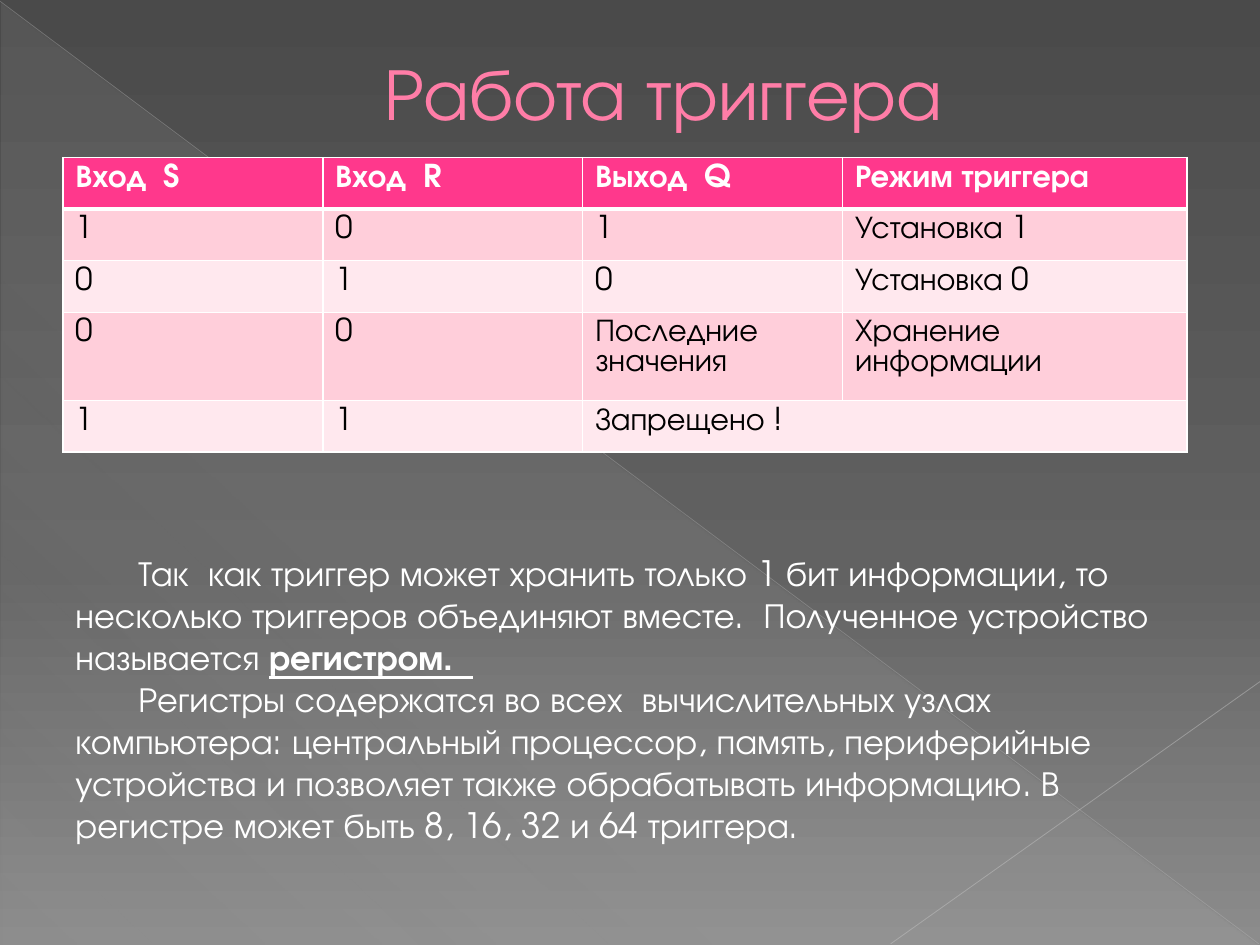
from lxml.etree import SubElement
from pptx import Presentation
from pptx.dml.color import RGBColor
from pptx.enum.shapes import MSO_CONNECTOR, MSO_SHAPE
from pptx.enum.text import MSO_ANCHOR, PP_ALIGN
from pptx.oxml.ns import qn
from pptx.util import Pt

FONT = "TeX Gyre Adventor"
WHITE = RGBColor(0xFF, 0xFF, 0xFF)
BLACK = RGBColor(0, 0, 0)
PINK = RGBColor(0xFF, 0x7D, 0xA7)
WINE = RGBColor(0xB1, 0x27, 0x61)
HEAD = RGBColor(0xFF, 0x38, 0x8C)
BANDS = RGBColor(0xFF, 0xCE, 0xDA), RGBColor(0xFF, 0xE8, 0xEE)
MIST = RGBColor(0xD2, 0xD2, 0xD2)
ASH = RGBColor(0xBF, 0xBF, 0xBF)
SILVER = RGBColor(0xC6, 0xC6, 0xC6)

# Gradient stops: position, colour, opacity, all in percent
SKY = [
    (0, RGBColor(0x4A, 0x4A, 0x4A), 100),
    (60, RGBColor(0x62, 0x62, 0x62), 100),
    (100, RGBColor(0x8C, 0x8C, 0x8C), 100),
]
VEIL = [(0, MIST, 10), (70, MIST, 8), (100, MIST, 1)]

# Ends, colour, width, opacity
LINES = [
    ((0, 0.7, 719.3, 539.3), ASH, 0.39, 35),
    ((720, 389.5, 509, 539.3), SILVER, 0.47, 45),
]

TITLE = "Работа триггера"
ROWS = [
    ("Вход  S", "Вход  R", "Выход  Q", "Режим триггера"),
    ("1", "0", "1", "Установка 1"),
    ("0", "1", "0", "Установка 0"),
    ("0", "0", "Последние значения", "Хранение информации"),
    ("1", "1", "Запрещено !", ""),
]
WIDTHS = (148.5, 148.5, 148.5, 197)
ROW = 29.5

# Paragraphs of (text, is a key term)
NOTES = [
    [("\tТак  как триггер может хранить только 1 бит информации, то несколько "
      "триггеров объединяют вместе.  Полученное устройство называется ", False),
     ("регистром.  ", True)],
    [("\tРегистры содержатся во всех  вычислительных узлах компьютера: "
      "центральный процессор, память, периферийные устройства и позволяет "
      "также обрабатывать информацию. В регистре может быть 8, 16, 32 и 64 "
      "триггера.", False)],
]


def sub(node, tag, **attrs):
    return SubElement(node, qn(tag), {k: str(v) for k, v in attrs.items()})


def tint(node, color, alpha=100):
    clr = sub(node, "a:srgbClr", val=color)
    if alpha < 100:
        sub(clr, "a:alpha", val=alpha * 1000)


def shade(root, stops, angle):
    """Swap the solid fill under root for a linear gradient."""
    solid = next(root.iter(qn("a:solidFill")))
    host = solid.getparent()
    grad = sub(host, "a:gradFill", rotWithShape=1)
    host.replace(solid, grad)
    items = sub(grad, "a:gsLst")
    for pos, color, alpha in stops:
        tint(sub(items, "a:gs", pos=pos * 1000), color, alpha)
    sub(grad, "a:lin", ang=angle * 60000, scaled=0)


def stroke(node, tag, width, color):
    line = sub(node, tag, w=int(Pt(width)))
    tint(sub(line, "a:solidFill"), color)
    return line


def style(run, size, color, bold=False):
    font = run.font
    font.name, font.size, font.bold = FONT, Pt(size), bold
    font.color.rgb = color


def add_scene(slide):
    slide.background.fill.solid()
    shade(slide.background._cSld, SKY, 90)
    veil = slide.shapes.add_shape(
        MSO_SHAPE.RIGHT_TRIANGLE, Pt(0.7), Pt(1.4), Pt(718.6), Pt(538.6))
    veil.shadow.inherit = False
    veil.line.fill.background()
    veil.fill.solid()
    shade(veil._element.spPr, VEIL, 133)
    for ends, color, width, alpha in LINES:
        line = slide.shapes.add_connector(
            MSO_CONNECTOR.STRAIGHT, *[Pt(v) for v in ends])
        line.line.width = Pt(width)
        line.line.color.rgb = color
        props = line._element.spPr
        sub(next(props.iter(qn("a:srgbClr"))), "a:alpha", val=alpha * 1000)
        sub(props, "a:effectLst")


def add_text(slide, *box):
    frame = slide.shapes.add_textbox(*[Pt(v) for v in box]).text_frame
    frame.word_wrap = True
    return frame


def add_title(slide):
    frame = add_text(slide, 36, 21, 648, 62.5)
    frame.vertical_anchor = MSO_ANCHOR.MIDDLE
    frame.text = TITLE
    para = frame.paragraphs[0]
    para.alignment = PP_ALIGN.CENTER
    para._p.get_or_add_pPr().set("marL", str(int(Pt(38))))
    run = para.runs[0]
    style(run, 42, PINK)
    props = run._r.get_or_add_rPr()
    props.insert(0, stroke(props, "a:ln", 0.5, WINE))


def add_grid(slide):
    table = slide.shapes.add_table(
        len(ROWS), len(WIDTHS), Pt(36), Pt(90),
        Pt(sum(WIDTHS)), Pt(ROW * len(ROWS))).table
    for col, width in zip(table.columns, WIDTHS):
        col.width = Pt(width)
    table.cell(4, 2).merge(table.cell(4, 3))
    for r, texts in enumerate(ROWS):
        table.rows[r].height = Pt(ROW)
        for c, text in enumerate(texts):
            cell = table.cell(r, c)
            props = cell._tc.get_or_add_tcPr()
            for side in "LRTB":
                thick = (r, side) in ((0, "B"), (1, "T"))
                stroke(props, "a:ln" + side, 3 if thick else 1, WHITE)
            cell.fill.solid()
            cell.fill.fore_color.rgb = BANDS[(r - 1) % 2] if r else HEAD
            if text:
                cell.text_frame.text = text
                run = cell.text_frame.paragraphs[0].runs[0]
                style(run, 18, BLACK if r else WHITE, r == 0)


def add_notes(slide):
    frame = add_text(slide, 36, 311.8, 660, 177)
    for i, parts in enumerate(NOTES):
        para = frame.add_paragraph() if i else frame.paragraphs[0]
        for text, key in parts:
            run = para.add_run()
            run.text = text
            style(run, 20, WHITE, key)
            run.font.underline = key


def main():
    deck = Presentation()
    deck.slide_width, deck.slide_height = Pt(720), Pt(540)
    slide = deck.slides.add_slide(deck.slide_layouts[6])
    add_scene(slide)
    add_title(slide)
    add_grid(slide)
    add_notes(slide)
    deck.save("out.pptx")


if __name__ == "__main__":
    main()
